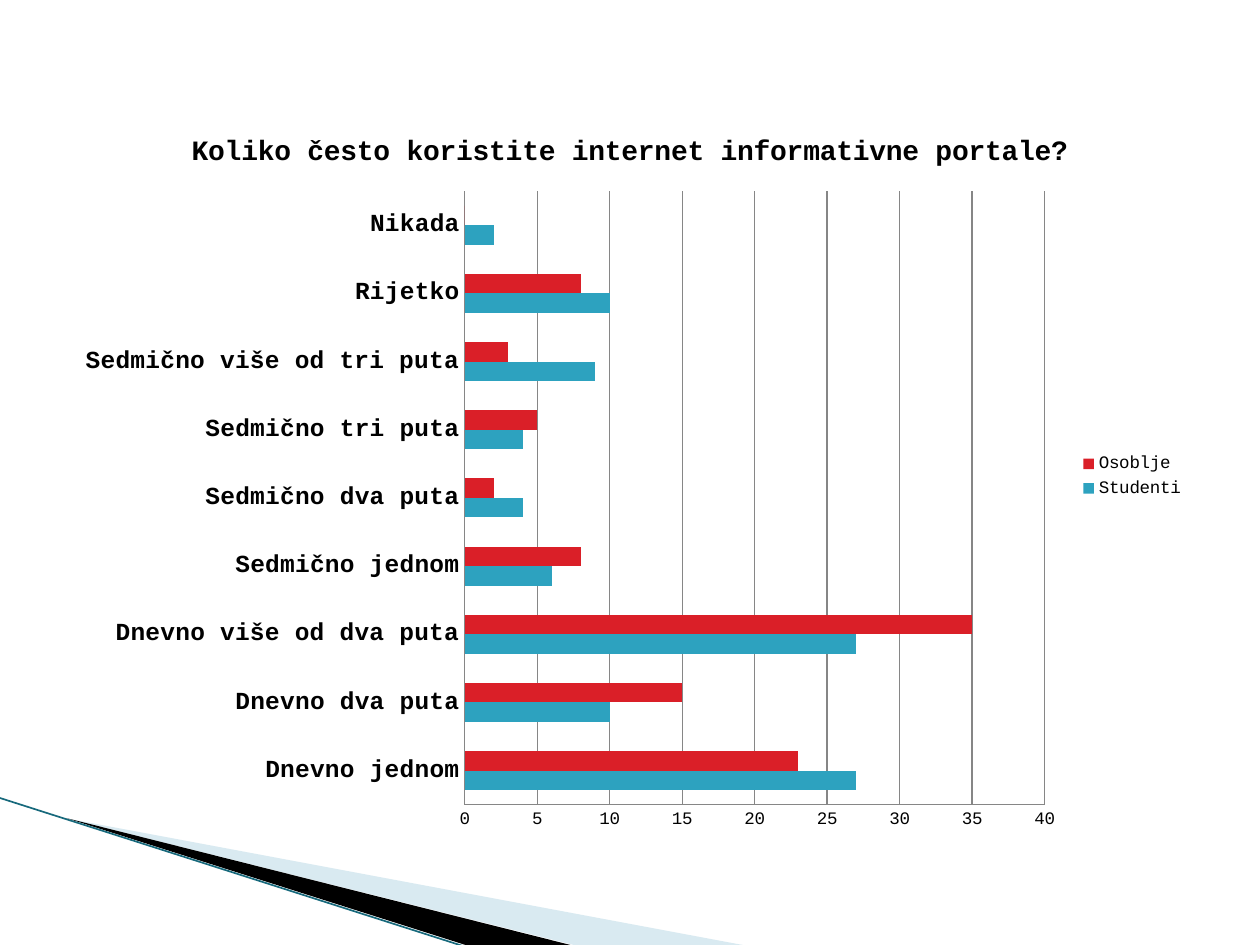
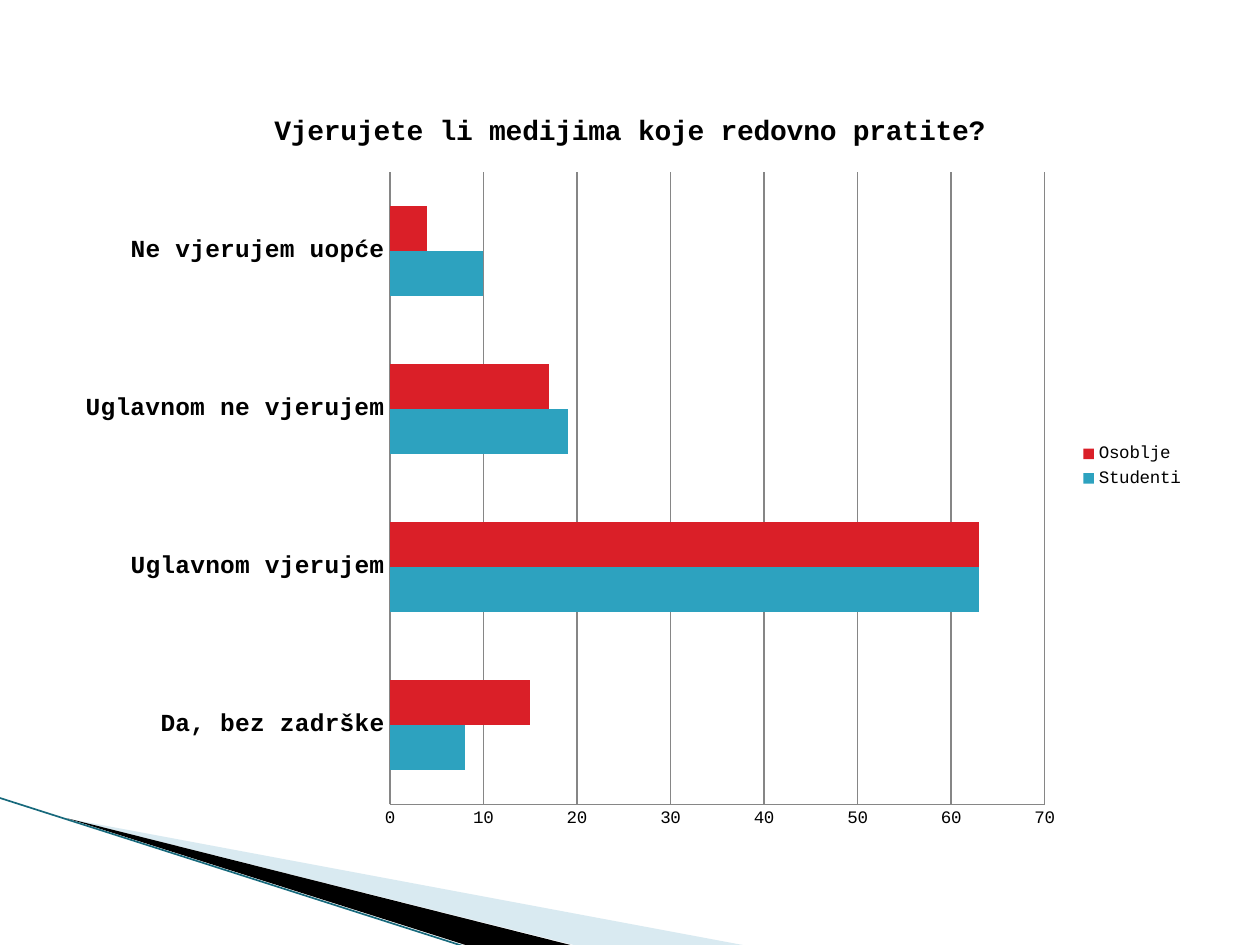
"""Build two survey slides, each with a clustered bar chart over a corner wedge."""
import pptx
import pptx.chart.data
import pptx.dml.color
import pptx.enum.chart
import pptx.enum.shapes
import pptx.oxml
import pptx.oxml.ns
import pptx.util

Pt = pptx.util.Pt
FONT = "Courier New"
INK, GRID, EDGE = "000000", "868686", "17697C"
PALE = "A0CBDC"
BARS = {"Studenti": "2DA2BF", "Osoblje": "DA1F28"}
BOTTOM = 540
SPACE = 'xmlns:a="http://schemas.openxmlformats.org/drawingml/2006/main"'


def color(code):
    """Turn a hex string into a colour."""
    return pptx.dml.color.RGBColor.from_string(code)


def reframe(shape, box):
    """Give a freeform a new frame while its outline stays in place."""
    left, top, width, height = [Pt(v) for v in box]
    trail = next(shape._element.iter(pptx.oxml.ns.qn("a:path")))
    for point in trail.iter(pptx.oxml.ns.qn("a:pt")):
        point.set("x", str(int(point.get("x")) + shape.left - left))
        point.set("y", str(int(point.get("y")) + shape.top - top))
    trail.set("w", str(width))
    trail.set("h", str(height))
    shape.left, shape.top, shape.width, shape.height = left, top, width, height


def wedge(slide, box, points, code, alpha=None):
    """Draw a filled triangle, with an opacity in percent if given."""
    pen = slide.shapes.build_freeform(*[Pt(v) for v in points[0]])
    pen.add_line_segments([(Pt(x), Pt(y)) for x, y in points[1:]])
    shape = pen.convert_to_shape()
    reframe(shape, box)
    shape.shadow.inherit = False
    shape.line.fill.background()
    shape.fill.solid()
    shape.fill.fore_color.rgb = color(code)
    if alpha:
        tint = shape.fill._xPr.find(".//" + pptx.oxml.ns.qn("a:srgbClr"))
        tint.append(pptx.oxml.parse_xml(f'<a:alpha {SPACE} val="{alpha * 1000}"/>'))


def edge(slide, start, end):
    """Draw the thin line along the wedge."""
    kind = pptx.enum.shapes.MSO_CONNECTOR.STRAIGHT
    line = slide.shapes.add_connector(kind, *[Pt(v) for v in start + end])
    line.line.color.rgb = color(EDGE)
    line.line.width = Pt(0.95)
    line._element.spPr.append(pptx.oxml.parse_xml(f"<a:effectLst {SPACE}/>"))


def corner(slide):
    """Draw the decoration that all slides share."""
    wedge(slide, (56.2, 393.8, 299.5, 113.8),
          [(39.6, 468), (424.5, BOTTOM), (328, BOTTOM)], PALE, 40)
    wedge(slide, (-4.3, 455.8, 299.5, 66.2),
          [(38, 467.5), (326, BOTTOM), (266, BOTTOM)], INK)
    edge(slide, (-0.7, 455.8), (267.1, 541.4))


def style(font, size, bold=False):
    """Set the shared font with a size and weight."""
    font.name = FONT
    font.size = Pt(size)
    font.bold = bold
    font.color.rgb = color(INK)


def trim(line):
    """Make an axis or grid line thin and grey."""
    line.color.rgb = color(GRID)
    line.width = Pt(0.75)


def survey(slide, title, top, step, limit, answers):
    """Add a bar chart of the answers given by students and staff."""
    data = pptx.chart.data.CategoryChartData()
    data.categories = list(answers)
    for name, values in zip(BARS, zip(*answers.values())):
        data.add_series(name, values)
    kinds = pptx.enum.chart
    chart = slide.shapes.add_chart(
        kinds.XL_CHART_TYPE.BAR_CLUSTERED,
        Pt(36), Pt(top), Pt(648), Pt(482.4 - top), data).chart
    style(chart.font, 10)

    chart.has_title = True
    frame = chart.chart_title.text_frame
    frame.text = title
    style(frame.paragraphs[0].font, 16, True)
    chart.chart_title.include_in_layout = False

    chart.has_legend = True
    chart.legend.position = kinds.XL_LEGEND_POSITION.RIGHT
    chart.legend.include_in_layout = False
    style(chart.legend.font, 10)

    plot = chart.plots[0]
    plot.vary_by_categories = False
    plot.gap_width = 150
    plot.overlap = 0
    for series in plot.series:
        series.format.fill.solid()
        series.format.fill.fore_color.rgb = color(BARS[series.name])

    scale = chart.value_axis
    scale.minimum_scale = 0
    scale.maximum_scale = limit
    scale.major_unit = step
    scale.has_major_gridlines = True
    trim(scale.major_gridlines.format.line)
    for axis, size, bold in ((chart.category_axis, 14, True), (scale, 10, False)):
        axis.major_tick_mark = kinds.XL_TICK_MARK.NONE
        axis.minor_tick_mark = kinds.XL_TICK_MARK.NONE
        trim(axis.format.line)
        style(axis.tick_labels.font, size, bold)


def main():
    """Build and save the deck."""
    deck = pptx.Presentation()
    deck.slide_width, deck.slide_height = Pt(720), Pt(BOTTOM)
    charts = [
        ("Koliko često koristite internet informativne portale?", 61.8, 5, 40, {
            "Dnevno jednom": (27, 23),
            "Dnevno dva puta": (10, 15),
            "Dnevno više od dva puta": (27, 35),
            "Sedmično jednom": (6, 8),
            "Sedmično dva puta": (4, 2),
            "Sedmično tri puta": (4, 5),
            "Sedmično više od tri puta": (9, 3),
            "Rijetko": (10, 8),
            "Nikada": (2, 0),
        }),
        ("Vjerujete li medijima koje redovno pratite?", 50.4, 10, 70, {
            "Da, bez zadrške": (8, 15),
            "Uglavnom vjerujem": (63, 63),
            "Uglavnom ne vjerujem": (19, 17),
            "Ne vjerujem uopće": (10, 4),
        }),
    ]
    for chart in charts:
        slide = deck.slides.add_slide(deck.slide_layouts[6])
        corner(slide)
        survey(slide, *chart)
    deck.save("out.pptx")


if __name__ == "__main__":
    main()
